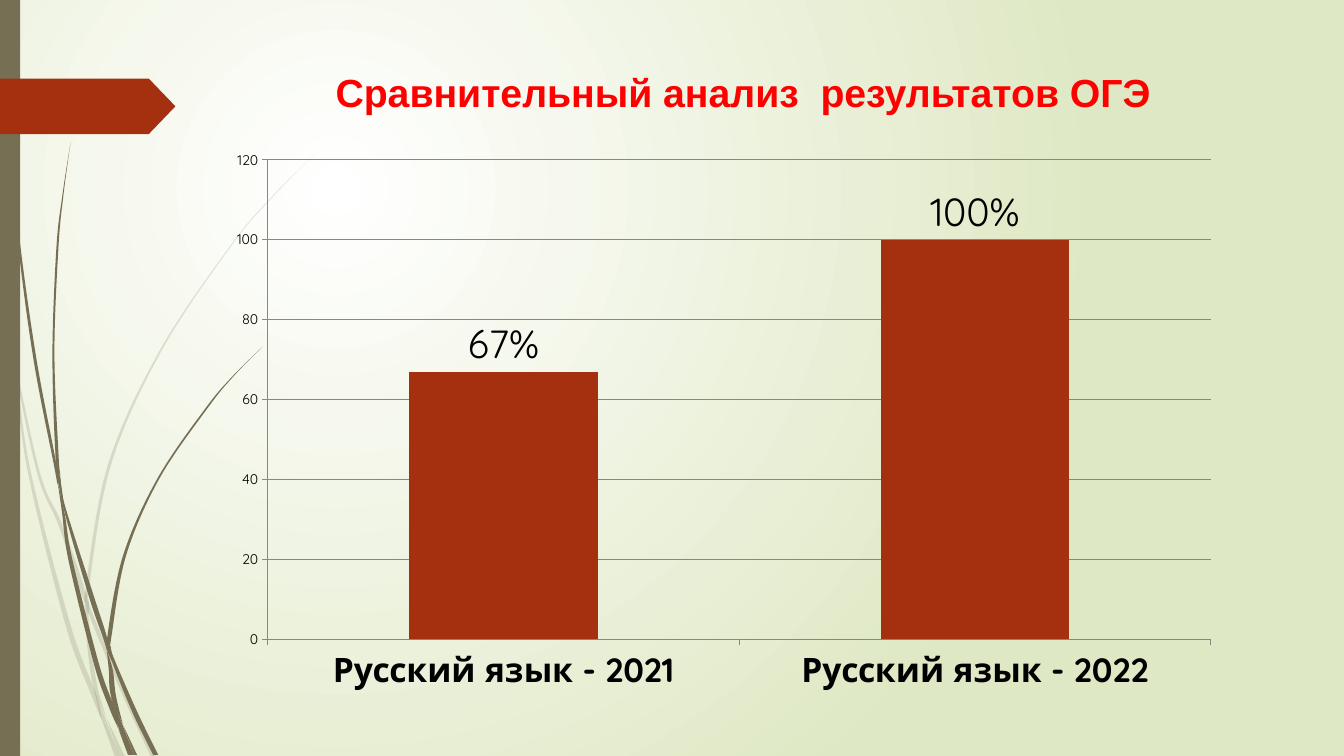
import pptx
import pptx.chart.data
import pptx.dml.color
import pptx.enum.chart
import pptx.enum.shapes
import pptx.enum.text
import pptx.oxml
import pptx.oxml.ns
import pptx.util

# Grid of tenth-inch cells
CELL = pptx.util.Inches(0.1)
COLS, ROWS = 133.3, 75
OLIVE, RUST, GREY = "766F54", "A53010", "878787"

# Grass blades as (column, row, width) knots, from top to bottom
PALE = [
    [(0, 28.2, 0), (.75, 32.2, .3), (1.1, 35, 0)],
    [(1.4, 34.5, 0), (1.65, 37, .2), (3.9, 47.2, .3), (6, 52.1, .4),
     (8, 58, .5), (8.45, 59.9, 0)],
    [(8.8, 59.6, 0), (9, 60.9, .4), (12.5, 69.3, .4), (15.25, 75.1, .5)],
    [(10.5, 71.1, 0), (12.15, 75.1, .5)],
    [(1.1, 35, 0), (1.6, 37.6, .15), (2.95, 47, .3), (6.75, 62, .5),
     (9.25, 68.8, .5), (10.1, 71.4, 0)],
    [(8.4, 59.9, 0), (8.6, 61, .3), (8.9, 64.6, .4), (9.5, 68.3, .4),
     (10.5, 71.1, 0)],
    [(31.2, 15.3, 0), (26.8, 19.75, .1), (22.85, 24.45, .1), (15.9, 34.85, .2),
     (10.85, 46.15, .3), (8.65, 58.4, .3), (8.8, 59.6, 0)],
    [(10.1, 71.4, 0), (11.65, 75.1, .5)],
    [(8.5, 58.6, 0), (8.6, 59.8, .4), (8.8, 61, 0)],
    [(9.3, 68.3, 0), (9.95, 70.4, .3), (10.3, 71.4, .4), (11.9, 75.1, 0)],
]
DARK = [
    [(.35, 0, .1), (.45, 4.8, .1), (.75, 11, .1), (1.8, 23.3, .2),
     (3.45, 35.5, .3), (5.45, 46, .25), (5.7, 48.1, 0)],
    [(6, 47.2, 0), (6.3, 50, .2), (9.05, 59.1, .5), (10.4, 63.2, .4),
     (10.6, 64.5, 0)],
    [(11, 64.1, 0), (11.15, 65.3, .3), (13.4, 70.7, .5), (15.45, 74.9, .5)],
    [(5.7, 47.7, 0), (6.3, 51, .25), (7, 55.6, .4), (9.55, 65.8, .5),
     (11, 70, .5), (11.7, 72.2, 0)],
    [(7, 14.1, 0), (6.25, 19.3, .1), (5.7, 24.5, .2), (5.3, 34.9, .2),
     (5.65, 45, .3), (6, 47.2, 0)],
    [(12.2, 71.9, 0), (13.45, 74.9, .3)],
    [(5.5, 44.9, 0), (5.8, 47.3, .3), (6.4, 50.5, 0)],
    [(26.05, 34.4, 0), (23.1, 37.35, .1), (20.45, 40.55, .2), (15.7, 47.5, .2),
     (12.35, 55.15, .3), (10.85, 63.2, .4), (11, 64.1, 0)],
    [(11.7, 72.2, 0), (12.9, 74.9, .4)],
    [(10.6, 64.5, 0), (11, 66.5, .4), (11.25, 69, .5), (12.2, 71.9, 0)],
    [(10.6, 63.1, 0), (10.8, 64.4, .4), (11.1, 65.6, 0)],
    [(11, 69.1, 0), (11.9, 71.9, .5), (13.15, 74.9, .3)],
]


def cells(*nums):
    return [round(n * CELL) for n in nums]


def tint(text):
    return pptx.dml.color.RGBColor.from_string(text)


def node(text):
    head, tail = text.split(">", 1)
    return pptx.oxml.parse_xml(f'{head} {pptx.oxml.ns.nsdecls("a")}>{tail}')


def paint(shape, fill, alpha=None):
    shape.shadow.inherit = False
    shape.fill.solid()
    shape.fill.fore_color.rgb = tint(fill)
    shape.line.fill.background()
    if alpha:
        clr = shape.element.spPr.find(".//" + pptx.oxml.ns.qn("a:srgbClr"))
        clr.append(node(f'<a:alpha val="{alpha * 1000}"></a:alpha>'))


def block(slide, kind, box, fill):
    shape = slide.shapes.add_shape(kind, *cells(*box))
    paint(shape, fill)
    return shape


def curve(shape, count):
    """Bend both sides of an outline that has count knots on each side."""
    qn = pptx.oxml.ns.qn
    dots = [(int(p.get("x")), int(p.get("y")))
            for p in shape.element.iter(qn("a:pt"))]
    for i, line in enumerate(list(shape.element.iter(qn("a:lnTo")))):
        if i == count - 1:
            continue
        side = dots[:count] if i < count else dots[count:]
        j = i % count
        a, b, c, d = (side[min(max(k, 0), count - 1)]
                      for k in range(j - 1, j + 3))
        ends = ([q + (r - p) / 6 for p, q, r in zip(a, b, c)],
                [q - (r - p) / 6 for p, q, r in zip(b, c, d)], c)
        pts = "".join(f'<a:pt x="{round(x)}" y="{round(y)}"/>' for x, y in ends)
        line.getparent().replace(
            line, node(f"<a:cubicBezTo>{pts}</a:cubicBezTo>"))


def blade(group, knots, alpha):
    left = [cells(x - w / 2, y) for x, y, w in knots]
    right = [cells(x + w / 2, y) for x, y, w in reversed(knots)]
    edge = left + right
    form = group.shapes.build_freeform(*edge[0])
    form.add_line_segments(edge[1:], close=True)
    shape = form.convert_to_shape()
    curve(shape, len(knots))
    paint(shape, OLIVE, alpha)


def style(font, size, color="000000", face="Quicksand", bold=False):
    font.size, font.name, font.bold = pptx.util.Pt(size), face, bold
    font.color.rgb = tint(color)


def label(slide, text, box, **look):
    frame = slide.shapes.add_textbox(*cells(*box)).text_frame
    frame.word_wrap = False
    frame.auto_size = pptx.enum.text.MSO_AUTO_SIZE.SHAPE_TO_FIT_TEXT
    para = frame.paragraphs[0]
    para.alignment = pptx.enum.text.PP_ALIGN.CENTER
    run = para.add_run()
    run.text = text
    style(run.font, **look)


def backdrop(slide):
    slide.background.fill.gradient()
    grad = slide.element.find(".//" + pptx.oxml.ns.qn("a:gradFill"))
    grad.getparent().replace(grad, node(
        '<a:gradFill><a:gsLst>'
        '<a:gs pos="0"><a:srgbClr val="FFFFFF"/></a:gs>'
        '<a:gs pos="100000"><a:srgbClr val="DFE8C4"/></a:gs></a:gsLst>'
        '<a:path path="circle"><a:fillToRect l="50000" t="50000" '
        'r="100000" b="100000"/></a:path></a:gradFill>'))


def rule(line):
    line.color.rgb = tint(GREY)
    line.width = pptx.util.Pt(0.75)


def bars(slide, box, names, vals):
    enum = pptx.enum.chart
    data = pptx.chart.data.CategoryChartData()
    data.categories = names
    data.add_series("Series 1", vals)
    chart = slide.shapes.add_chart(
        enum.XL_CHART_TYPE.COLUMN_CLUSTERED, *cells(*box), data).chart
    chart.has_legend = chart.has_title = False
    style(chart.font, 10)
    # Axes
    for axis, size in ((chart.category_axis, 24), (chart.value_axis, 10)):
        style(axis.tick_labels.font, size, bold=size > 10)
        axis.major_tick_mark = enum.XL_TICK_MARK.OUTSIDE
        rule(axis.format.line)
    scale = chart.value_axis
    scale.minimum_scale, scale.maximum_scale, scale.major_unit = 0, 120, 20
    rule(scale.major_gridlines.format.line)
    # Columns and their labels
    plot = chart.plots[0]
    plot.gap_width, plot.vary_by_categories = 150, False
    row = plot.series[0]
    row.format.fill.solid()
    row.format.fill.fore_color.rgb = tint(RUST)
    row.data_labels.show_value = True
    style(row.data_labels.font, 28, bold=True)
    for i, val in enumerate(vals):
        tag = row.points[i].data_label
        run = tag.text_frame.paragraphs[0].add_run()
        run.text = f"{val}%"
        style(run.font, 28)
        tag.position = enum.XL_LABEL_POSITION.OUTSIDE_END


def main():
    deck = pptx.Presentation()
    deck.slide_width, deck.slide_height = cells(COLS, ROWS)
    slide = deck.slides.add_slide(deck.slide_layouts[6])
    kinds = pptx.enum.shapes.MSO_SHAPE
    # Background and side decoration
    backdrop(slide)
    for tuft, alpha in ((PALE, 20), (DARK, None)):
        group = slide.shapes.add_group_shape()
        for knots in tuft:
            blade(group, knots, alpha)
    block(slide, kinds.RECTANGLE, (0, 0, 2, ROWS), OLIVE)
    flag = block(slide, kinds.PENTAGON, (0, 7.8, 17.4, 5.5), RUST)
    flag.adjustments[0] = 0.48
    # Title and chart
    label(slide, "Сравнительный анализ  результатов ОГЭ", (31.8, 6.3, 83.8, 5.7),
          size=28, color="FF0000", face="Arial", bold=True)
    bars(slide, (21.5, 13.9, 100.6, 55.8),
         ["Русский язык - 2021", "Русский язык - 2022"], [67, 100])
    deck.save("out.pptx")


if __name__ == "__main__":
    main()
